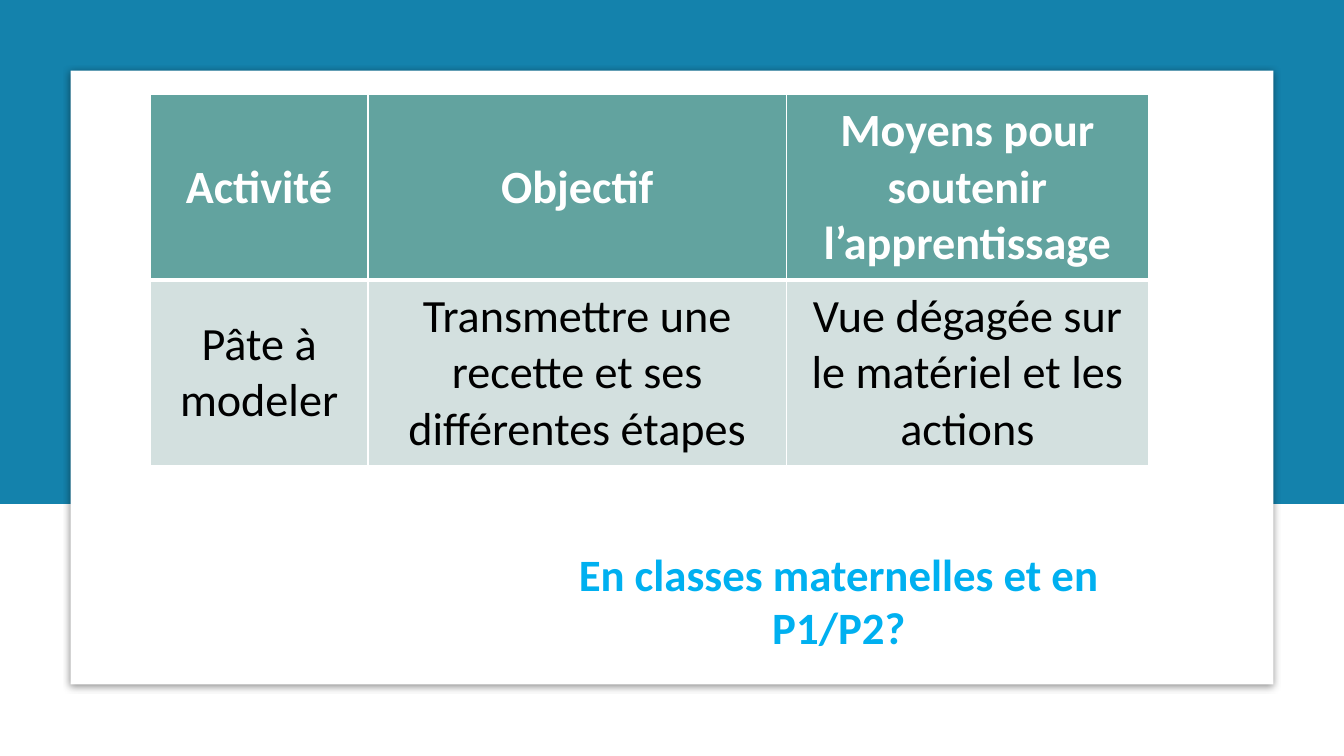
"""Build a slide with a table of classroom activities and a closing question."""
from lxml.etree import SubElement
from pptx import Presentation
from pptx.dml.color import RGBColor
from pptx.enum.shapes import MSO_SHAPE
from pptx.enum.text import MSO_ANCHOR, MSO_AUTO_SIZE, PP_ALIGN
from pptx.oxml.ns import qn
from pptx.util import Inches, Pt

WHITE = "FFFFFF"


def color(value):
    return RGBColor.from_string(value)


def style_text(paragraph, size, value, bold):
    paragraph.alignment = PP_ALIGN.CENTER
    font = paragraph.font
    font.name = "Calibri"
    font.size = Pt(size)
    font.bold = bold
    font.color.rgb = color(value)


deck = Presentation()
deck.slide_width, deck.slide_height = Inches(13.33), Inches(7.5)
page = deck.slides.add_slide(deck.slide_layouts[6])

panels = []
for left, top, width, height, fill in (
    (0, 0, 13.33, 5, "1482AC"),
    (0.7, 0.7, 11.93, 6.09, WHITE),
):
    panel = page.shapes.add_shape(
        MSO_SHAPE.RECTANGLE, Inches(left), Inches(top), Inches(width), Inches(height)
    )
    panel.fill.solid()
    panel.fill.fore_color.rgb = color(fill)
    panel.line.fill.background()
    panel.shadow.inherit = False
    panels.append(panel)

card = panels[-1]
effects = card._element.spPr.find(qn("a:effectLst"))
shadow = SubElement(
    effects, qn("a:outerShdw"), blurRad=str(Pt(5)), dist=str(Pt(1.4)),
    dir="5400000", algn="ctr", rotWithShape="0",
)
shade = SubElement(shadow, qn("a:srgbClr"), val="000000")
SubElement(shade, qn("a:alpha"), val="43000")

rows = (
    ("Activité", "Objectif", "Moyens pour soutenir l’apprentissage"),
    (
        "Pâte à modeler",
        "Transmettre une recette et ses différentes étapes",
        "Vue dégagée sur le matériel et les actions",
    ),
)
row_styles = (
    ("62A39F", WHITE, True, {"L": 1, "R": 1, "T": 1, "B": 3}),
    ("D3E0DF", "000000", False, {"L": 1, "R": 1, "T": 3, "B": 1}),
)
table = page.shapes.add_table(
    2, 3, Inches(1.49), Inches(0.94), Inches(9.9), Inches(3.68)
).table
for column, width in zip(table.columns, (2.16, 4.15, 3.59)):
    column.width = Inches(width)

for row, texts, (fill, text_color, bold, borders) in zip(table.rows, rows, row_styles):
    row.height = Inches(1.84)
    for cell, text in zip(row.cells, texts):
        cell.text = text
        cell.vertical_anchor = MSO_ANCHOR.MIDDLE
        cell.margin_left = cell.margin_right = Inches(0.14)
        cell.margin_top = cell.margin_bottom = Inches(0.07)
        style_text(cell.text_frame.paragraphs[0], 33, text_color, bold)
        properties = cell._tc.get_or_add_tcPr()
        for side, weight in borders.items():
            border = SubElement(properties, qn(f"a:ln{side}"), w=str(Pt(weight)))
            SubElement(SubElement(border, qn("a:solidFill")), qn("a:srgbClr"), val=WHITE)
        cell.fill.solid()
        cell.fill.fore_color.rgb = color(fill)

box = page.shapes.add_textbox(Inches(5.36), Inches(5.37), Inches(5.92), Inches(1.18))
frame = box.text_frame
frame.word_wrap = True
frame.auto_size = MSO_AUTO_SIZE.SHAPE_TO_FIT_TEXT
question = frame.paragraphs[0]
question.text = "En classes maternelles et en P1/P2?"
style_text(question, 32, "00B0F0", True)

deck.save("out.pptx")
